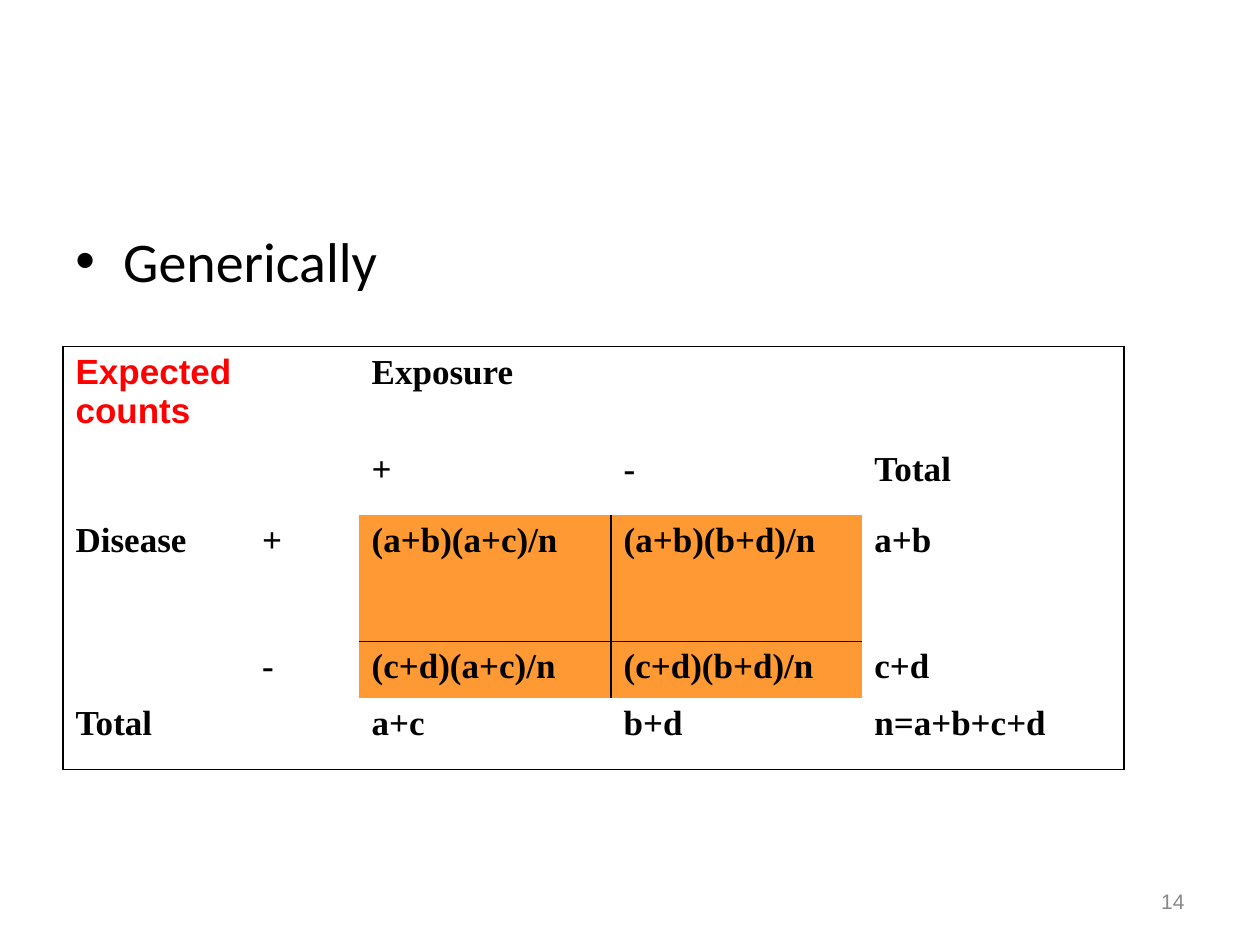
from lxml.etree import SubElement
from pptx import Presentation
from pptx.dml.color import RGBColor
from pptx.enum.text import MSO_ANCHOR, PP_ALIGN
from pptx.oxml.ns import qn
from pptx.util import Inches, Pt

BLACK = RGBColor(0, 0, 0)
RED = RGBColor(0xFF, 0, 0)
GREY = RGBColor(0x89, 0x89, 0x89)
ORANGE = RGBColor(0xFF, 0x99, 0x33)

COLUMNS = [14.8, 8.7, 20, 19.9, 20.8]
ROWS = [7.7, 5.7, 10, 4.5, 5.7]
COUNTS = [
    ["Expected counts", "", "Exposure", "", ""],
    ["", "", "+", "-", "Total"],
    ["Disease", "+", "(a+b)(a+c)/n", "(a+b)(b+d)/n", "a+b"],
    ["", "-", "(c+d)(a+c)/n", "(c+d)(b+d)/n", "c+d"],
    ["Total", "", "a+c", "b+d", "n=a+b+c+d"],
]
MERGED = [((0, 2), (0, 3)), ((2, 0), (3, 0))]
EXPECTED = {(2, 2), (2, 3), (3, 2), (3, 3)}
SIDES = {"a:lnL": (0, -1), "a:lnR": (0, 1), "a:lnT": (-1, 0), "a:lnB": (1, 0)}


class SlideBuilder:
    """Places styled elements on a grid of 100 columns by 75 rows."""

    def __init__(self, deck):
        self.page = deck.slides.add_slide(deck.slide_layouts[6])
        self.column = deck.slide_width / 100
        self.row = deck.slide_height / 75

    def place(self, left, top, width, height):
        return (round(left * self.column), round(top * self.row),
                round(width * self.column), round(height * self.row))

    def style(self, para, name, size, color, bold=False):
        para.font.name = name
        para.font.size = Pt(size)
        para.font.color.rgb = color
        para.font.bold = bold

    def hang(self, para, bullet=None):
        properties = para._p.get_or_add_pPr()
        properties.set("marL", str(Inches(0.38)))
        properties.set("indent", str(-Inches(0.38)))
        if bullet:
            SubElement(properties, qn("a:buFont"), typeface="Arial")
            SubElement(properties, qn("a:buChar"), char=bullet)

    def text(self, words, area, name, size, color, anchor=MSO_ANCHOR.TOP):
        box = self.page.shapes.add_textbox(*self.place(*area))
        box.text_frame.word_wrap = True
        box.text_frame.vertical_anchor = anchor
        para = box.text_frame.paragraphs[0]
        para.text = words
        self.style(para, name, size, color)
        return para

    def border(self, cell, side, visible):
        line = SubElement(cell._tc.get_or_add_tcPr(), qn(side), w=str(Pt(1)))
        if visible:
            fill = SubElement(line, qn("a:solidFill"))
            SubElement(fill, qn("a:srgbClr"), val=str(BLACK))
        else:
            SubElement(line, qn("a:noFill"))

    def cell(self, cell, spot, words):
        row, column = spot
        for side, (down, across) in SIDES.items():
            neighbour = (row + down, column + across)
            outside = (neighbour[0] not in range(len(ROWS))
                       or neighbour[1] not in range(len(COLUMNS)))
            self.border(cell, side, outside or {spot, neighbour} <= EXPECTED)
        if spot in EXPECTED:
            cell.fill.solid()
            cell.fill.fore_color.rgb = ORANGE
        else:
            cell.fill.background()
        para = cell.text_frame.paragraphs[0]
        para.text = words
        if spot == (0, 0):
            self.style(para, "Arial", 20, RED, True)
        else:
            self.style(para, "Times New Roman", 20, BLACK, True)
            self.hang(para)

    def table(self, left, top):
        area = self.place(left, top, sum(COLUMNS), sum(ROWS))
        table = self.page.shapes.add_table(len(ROWS), len(COLUMNS), *area).table
        table.first_row = table.horz_banding = False
        for column, width in zip(table.columns, COLUMNS):
            column.width = round(width * self.column)
        for row, height in zip(table.rows, ROWS):
            row.height = round(height * self.row)
        for row, line in enumerate(COUNTS):
            for column, words in enumerate(line):
                self.cell(table.cell(row, column), (row, column), words)
        for first, last in MERGED:
            table.cell(*first).merge(table.cell(*last))


def main():
    deck = Presentation()
    deck.slide_width, deck.slide_height = Inches(10), Inches(7.5)
    slide = SlideBuilder(deck)
    heading = slide.text("Generically", (5, 17.5, 90, 49.5), "Calibri", 32, BLACK)
    slide.hang(heading, "•")
    number = slide.text("14", (71.7, 69.5, 23.3, 4), "Arial", 12, GREY, MSO_ANCHOR.MIDDLE)
    number.alignment = PP_ALIGN.RIGHT
    slide.table(5, 27.5)
    deck.save("out.pptx")


if __name__ == "__main__":
    main()
